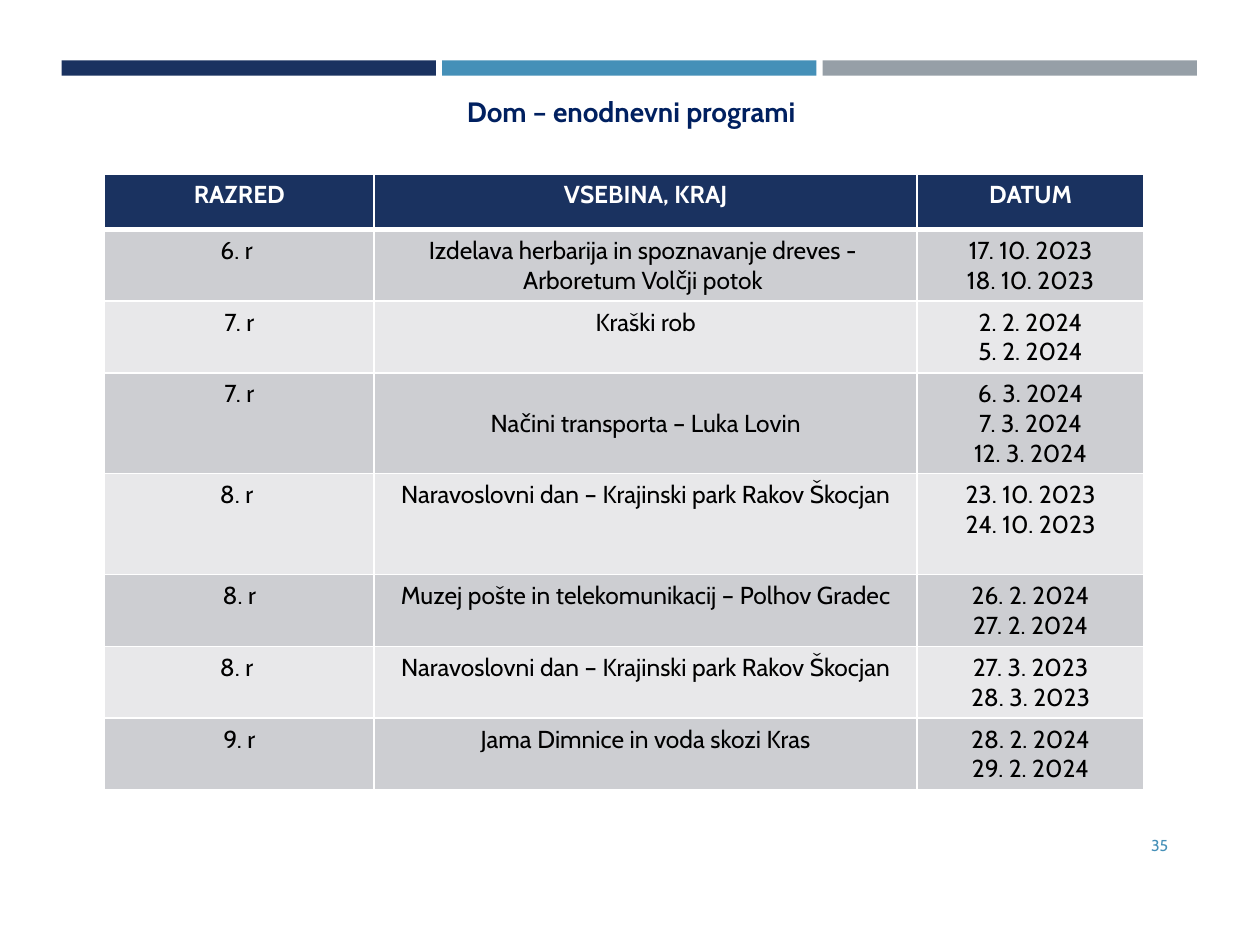
import pptx
import pptx.util
import pptx.dml.color
import pptx.enum.shapes
import pptx.enum.text
import pptx.oxml
import pptx.oxml.ns

Inches, Pt = pptx.util.Inches, pptx.util.Pt
RGB = pptx.dml.color.RGBColor
ALIGN = pptx.enum.text.PP_ALIGN
ANCHOR = pptx.enum.text.MSO_ANCHOR

NAVY = RGB(0x1A, 0x32, 0x60)
BLUE = RGB(0x45, 0x90, 0xB8)
GREY = RGB(0x96, 0x9F, 0xA7)
INK = RGB(0x00, 0x20, 0x60)
BLACK = RGB(0, 0, 0)
WHITE = RGB(0xFF, 0xFF, 0xFF)
BANDS = RGB(0xCD, 0xCE, 0xD2), RGB(0xE8, 0xE8, 0xEA)
FONT = "Cabin"

# Content
TITLE = "Dom – enodnevni programi"
PAGE = "35"
HEAD = ("RAZRED", "VSEBINA, KRAJ", "DATUM")
PARK = "Naravoslovni dan – Krajinski park Rakov Škocjan"
TRIPS = [
    ("6. r ", "Izdelava herbarija in spoznavanje dreves - \nArboretum Volčji potok ",
     "17. 10. 2023\n18. 10. 2023"),
    ("7. r", "Kraški rob", "2. 2. 2024\n5. 2. 2024"),
    ("7. r", "Načini transporta – Luka Lovin", "6. 3. 2024\n7. 3. 2024\n12. 3. 2024"),
    ("8. r ", PARK, "23. 10. 2023\n24. 10. 2023"),
    ("8. r", "Muzej pošte in telekomunikacij – Polhov Gradec", "26. 2. 2024\n27. 2. 2024"),
    ("8. r ", PARK, "27. 3. 2023\n28. 3. 2023"),
    ("9. r", "Jama Dimnice in voda skozi Kras", "28. 2. 2024\n29. 2. 2024"),
]
COLS = (2.14, 4.31, 1.8)
ROWS = (0.44, 0.57, 0.57, 0.8, 0.8, 0.57, 0.57, 0.57)
MIDDLE = (3, 1)  # the one cell whose text is centred vertically


def write(frame, text, size=14, color=BLACK, bold=False, align=ALIGN.CENTER, space=None):
    frame.word_wrap = True
    frame.text = text
    for para in frame.paragraphs:
        para.alignment = align
        if space:
            para.line_spacing = space
        for run in para.runs:
            font = run.font
            font.name, font.size, font.bold = FONT, Pt(size), bold
            font.color.rgb = color


def border(cell, **widths):
    props = cell._tc.get_or_add_tcPr()
    for spot, (side, width) in enumerate(widths.items()):
        props.insert(spot, pptx.oxml.parse_xml(
            f'<a:{side} {pptx.oxml.ns.nsdecls("a")} w="{Pt(width)}">'
            f'<a:solidFill><a:srgbClr val="{WHITE}"/></a:solidFill></a:{side}>'))


def place(shape, left, top, width, height):
    shape.left, shape.top = Inches(left), Inches(top)
    shape.width, shape.height = Inches(width), Inches(height)


def main():
    deck = pptx.Presentation()
    deck.slide_width, deck.slide_height = Inches(10), Inches(7.5)
    slide = deck.slides.add_slide(deck.slide_layouts[5])
    shapes = slide.shapes

    # Colour bars
    for i, color in enumerate((NAVY, BLUE, GREY)):
        bar = shapes.add_shape(pptx.enum.shapes.MSO_SHAPE.RECTANGLE, 0, 0, 0, 0)
        place(bar, 0.49 + i * 3.02, 0.48, 2.97, 0.12)
        bar.shadow.inherit = False
        bar.fill.solid()
        bar.fill.fore_color.rgb = color
        bar.line.fill.background()

    # Title
    title = shapes.title
    place(title, 0.7, 0.73, 8.62, 0.44)
    title.text_frame.vertical_anchor = ANCHOR.TOP
    title.text_frame.auto_size = pptx.enum.text.MSO_AUTO_SIZE.NONE
    write(title.text_frame, TITLE, size=16, color=INK, bold=True, space=0.9)

    # Page number
    page = shapes.add_textbox(Inches(8.53), Inches(6.51), Inches(0.84), Inches(0.4))
    page.text_frame.vertical_anchor = ANCHOR.MIDDLE
    write(page.text_frame, PAGE, size=9, color=BLUE, align=ALIGN.RIGHT)

    # Table of trips
    table = shapes.add_table(len(ROWS), len(COLS), Inches(0.83), Inches(1.38),
                             Inches(sum(COLS)), Inches(sum(ROWS))).table
    for col, width in zip(table.columns, COLS):
        col.width = Inches(width)
    for r, texts in enumerate([HEAD] + TRIPS):
        table.rows[r].height = Inches(ROWS[r])
        top = r == 0
        for c, text in enumerate(texts):
            cell = table.cell(r, c)
            write(cell.text_frame, text, color=WHITE if top else BLACK, bold=top)
            if (r, c) == MIDDLE:
                cell.vertical_anchor = ANCHOR.MIDDLE
            cell.fill.solid()
            cell.fill.fore_color.rgb = NAVY if top else BANDS[(r - 1) % 2]
            border(cell, lnL=1, lnR=1, lnT=3 if r == 1 else 1, lnB=3 if top else 1)

    deck.save("out.pptx")


if __name__ == "__main__":
    main()
